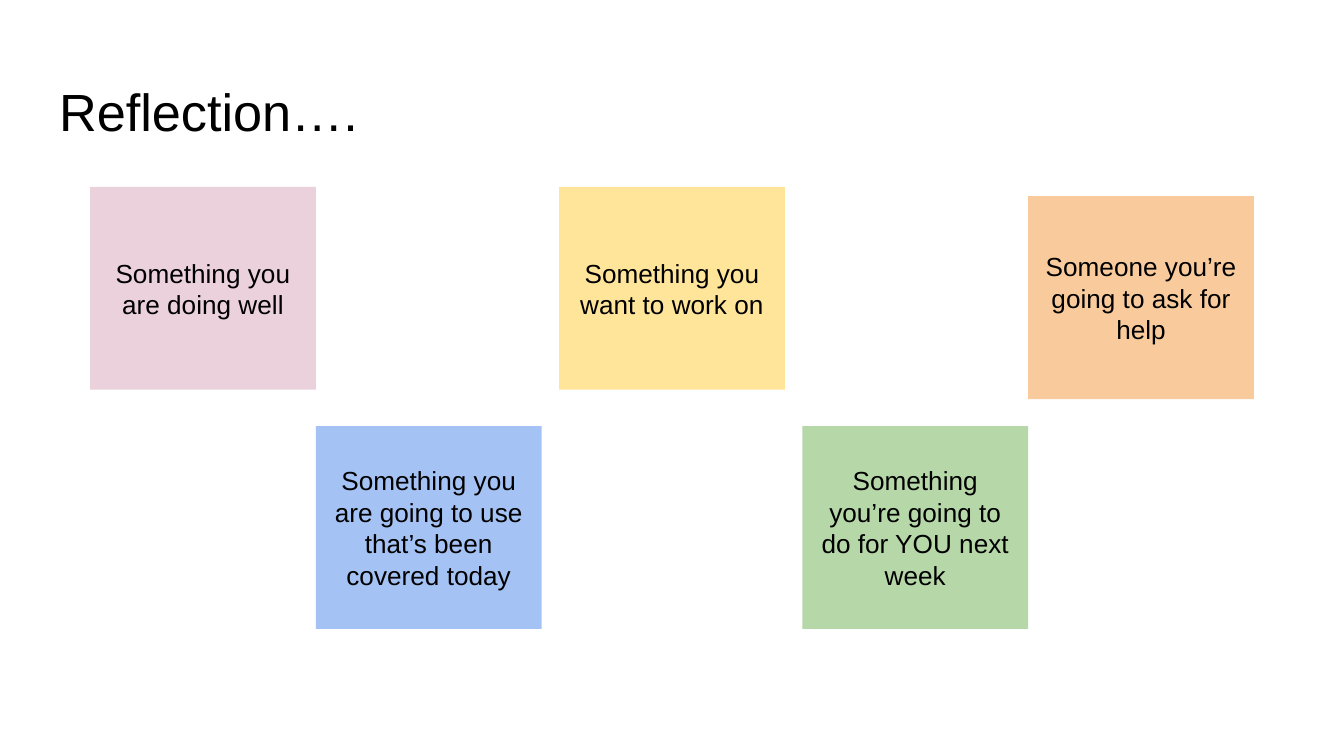
import pptx
import pptx.util
import pptx.dml.color
import pptx.enum.shapes
import pptx.enum.text
from pptx.util import Inches

ANCHOR = pptx.enum.text.MSO_ANCHOR
ALIGN = pptx.enum.text.PP_ALIGN
NOTE_W, NOTE_H = 1.68, 1.51
TOP_ROW, BOTTOM_ROW = 1.39, 3.17


def color(hex_string):
    return pptx.dml.color.RGBColor.from_string(hex_string)


def write_text(s, text, size, align, anchor):
    tf = s.text_frame
    frame_format = {"word_wrap": True, "vertical_anchor": anchor,
                    "auto_size": pptx.enum.text.MSO_AUTO_SIZE.NONE}
    for side in ("left", "top", "right", "bottom"):
        frame_format[f"margin_{side}"] = Inches(0.1)
    for name, value in frame_format.items():
        setattr(tf, name, value)
    p = tf.paragraphs[0]
    p.alignment = align
    r = p.add_run()
    r.text = text
    font_format = {"name": "Arial", "size": pptx.util.Pt(size), "bold": False}
    for name, value in font_format.items():
        setattr(r.font, name, value)
    r.font.color.rgb = color("000000")


def place_title(slide, box, text):
    s = slide.shapes.title
    for name, value in zip(("left", "top", "width", "height"), box):
        setattr(s, name, Inches(value))
    write_text(s, text, 28, ALIGN.LEFT, ANCHOR.TOP)


def add_note(slide, box, text, fill):
    s = slide.shapes.add_shape(pptx.enum.shapes.MSO_SHAPE.RECTANGLE,
                               *(Inches(v) for v in box))
    s.shadow.inherit = False
    s.fill.solid()
    s.fill.fore_color.rgb = color(fill)
    s.line.fill.background()
    write_text(s, text, 14, ALIGN.CENTER, ANCHOR.MIDDLE)


def build_reflection_slide(prs):
    slide = prs.slides.add_slide(prs.slide_layouts[5])
    place_title(slide, (0.34, 0.49, 9.32, 0.63), "Reflection….")

    # Sticky notes: left, top, text, fill
    notes = [
        (0.67, TOP_ROW, "Something you are doing well", "EAD1DC"),
        (4.16, TOP_ROW, "Something you want to work on", "FFE599"),
        (2.35, BOTTOM_ROW,
         "Something you are going to use that’s been covered today", "A4C2F4"),
        (5.97, BOTTOM_ROW,
         "Something you’re going to do for YOU next week", "B6D7A8"),
        (7.65, TOP_ROW + 0.07, "Someone you’re going to ask for help", "F9CB9C"),
    ]
    for left, top, text, fill in notes:
        add_note(slide, (left, top, NOTE_W, NOTE_H), text, fill)


def main():
    prs = pptx.Presentation()
    # Widescreen, 16:9
    prs.slide_width, prs.slide_height = Inches(10), Inches(10 * 9 / 16)
    build_reflection_slide(prs)
    prs.save("out.pptx")


if __name__ == "__main__":
    main()
